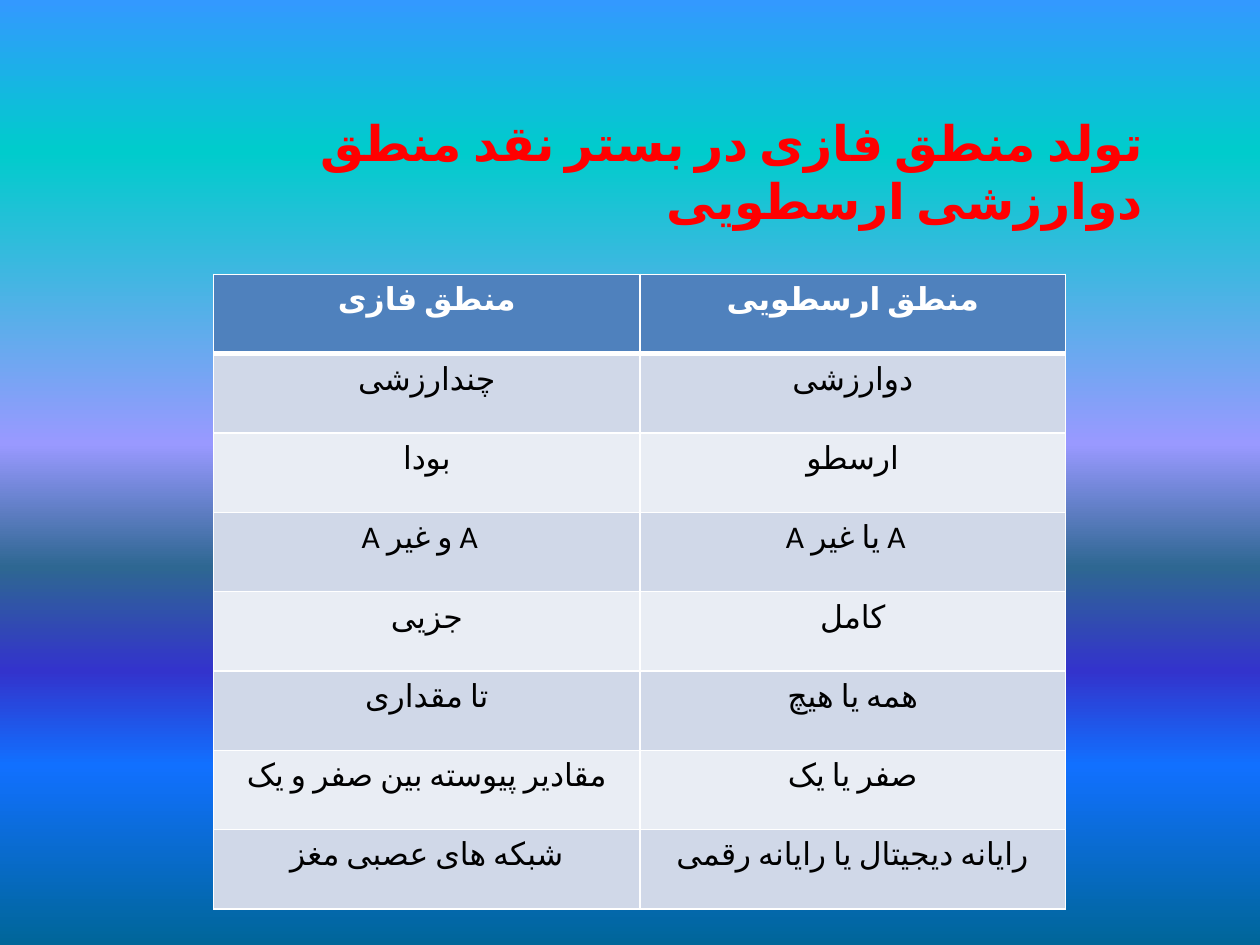
from lxml.etree import SubElement
from pptx import Presentation
from pptx.dml.color import RGBColor as RGB
from pptx.enum.text import MSO_AUTO_SIZE as FIT, PP_ALIGN as AL
from pptx.oxml.ns import qn
from pptx.util import Pt

TITLE = "تولد منطق فازی در بستر نقد منطق دوارزشی ارسطویی"
ROWS = [  # fuzzy logic, Aristotelian logic
    ("منطق فازی", "منطق ارسطویی"),
    ("چندارزشی", "دوارزشی"),
    ("بودا", "ارسطو"),
    ("A و غیر A", "A یا غیر A"),
    ("جزیی", "کامل"),
    ("تا مقداری", "همه یا هیچ"),
    ("مقادیر پیوسته بین صفر و یک", "صفر یا یک"),
    ("شبکه های عصبی مغز", "رایانه دیجیتال یا رایانه رقمی"),
]
RTL_CELLS = {(6, 0), (7, 0)}
LETTER_ROW = 3  # sits slightly left of centre

FONT = "Calibri"
C = {"title": "FF0000", "head": "4F81BD", "odd": "D0D8E8", "even": "E9EDF4",
     "white": "FFFFFF", "text": "000000"}
STOPS = [(0, "3399FF"), (16, "00CCCC"), (47, "9999FF"), (60, "2E6792"),
         (71, "3333CC"), (81, "1170FF"), (100, "006699")]
TABLE_LEFT, TABLE_TOP, ROW_H = 122, 156.8, 45.33
COL_W = (243.8, 243)


def write(tf, text, align, size, color, bold, rtl=False):
    p = tf.paragraphs[0]
    p.alignment = align
    if rtl:
        p._p.get_or_add_pPr().set("rtl", "1")
    r = p.add_run()
    r.text = text
    for name, value in {"name": FONT, "size": Pt(size), "bold": bold}.items():
        setattr(r.font, name, value)
    r.font.color.rgb = RGB.from_string(color)
    # Persian letters take the complex-script font
    rPr = r._r.get_or_add_rPr()
    rPr.set("lang", "fa-IR")
    SubElement(rPr, qn("a:cs"), typeface=FONT)


def set_borders(cell, widths):
    tcPr = cell._tc.get_or_add_tcPr()
    for i, (side, width) in enumerate(widths.items()):
        ln = tcPr.makeelement(qn("a:ln" + side), {"w": str(Pt(width))})
        SubElement(SubElement(ln, qn("a:solidFill")), qn("a:srgbClr"), val=C["white"])
        tcPr.insert(i, ln)


prs = Presentation()
prs.slide_width, prs.slide_height = Pt(720), Pt(540)
s = prs.slides.add_slide(prs.slide_layouts[6])

# Background gradient, top to bottom
fill = s.background.fill
fill.gradient()
fill.gradient_angle = 270
stops = next(s.element.iter(qn("a:gsLst")))
for old in list(stops):
    stops.remove(old)
for pos, color in STOPS:
    gs = SubElement(stops, qn("a:gs"), pos=str(pos * 1000))
    SubElement(gs, qn("a:srgbClr"), val=color)

# Title
tf = s.shapes.add_textbox(Pt(76.3), Pt(60.5), Pt(584), Pt(41)).text_frame
tf.word_wrap = True
tf.auto_size = FIT.SHAPE_TO_FIT_TEXT
write(tf, TITLE, AL.RIGHT, 28, C["title"], True, rtl=True)

# Comparison table
table = s.shapes.add_table(len(ROWS), len(COL_W), Pt(TABLE_LEFT), Pt(TABLE_TOP),
                           Pt(sum(COL_W)), Pt(ROW_H * len(ROWS))).table
for col, width in zip(table.columns, COL_W):
    col.width = Pt(width)
for i, texts in enumerate(ROWS):
    table.rows[i].height = Pt(ROW_H)
    head = i == 0
    fill_name = "head" if head else "odd" if i % 2 else "even"
    for j, text in enumerate(texts):
        cell = table.cell(i, j)
        cell.fill.solid()
        cell.fill.fore_color.rgb = RGB.from_string(C[fill_name])
        if i == LETTER_ROW:
            cell.margin_right = Pt(15.2)
        write(cell.text_frame, text, AL.CENTER, 18,
              C["white" if head else "text"], head, rtl=(i, j) in RTL_CELLS)
        set_borders(cell, {"L": 1, "R": 1, "T": 3 if i == 1 else 1,
                           "B": 3 if head else 1})

prs.save("out.pptx")
